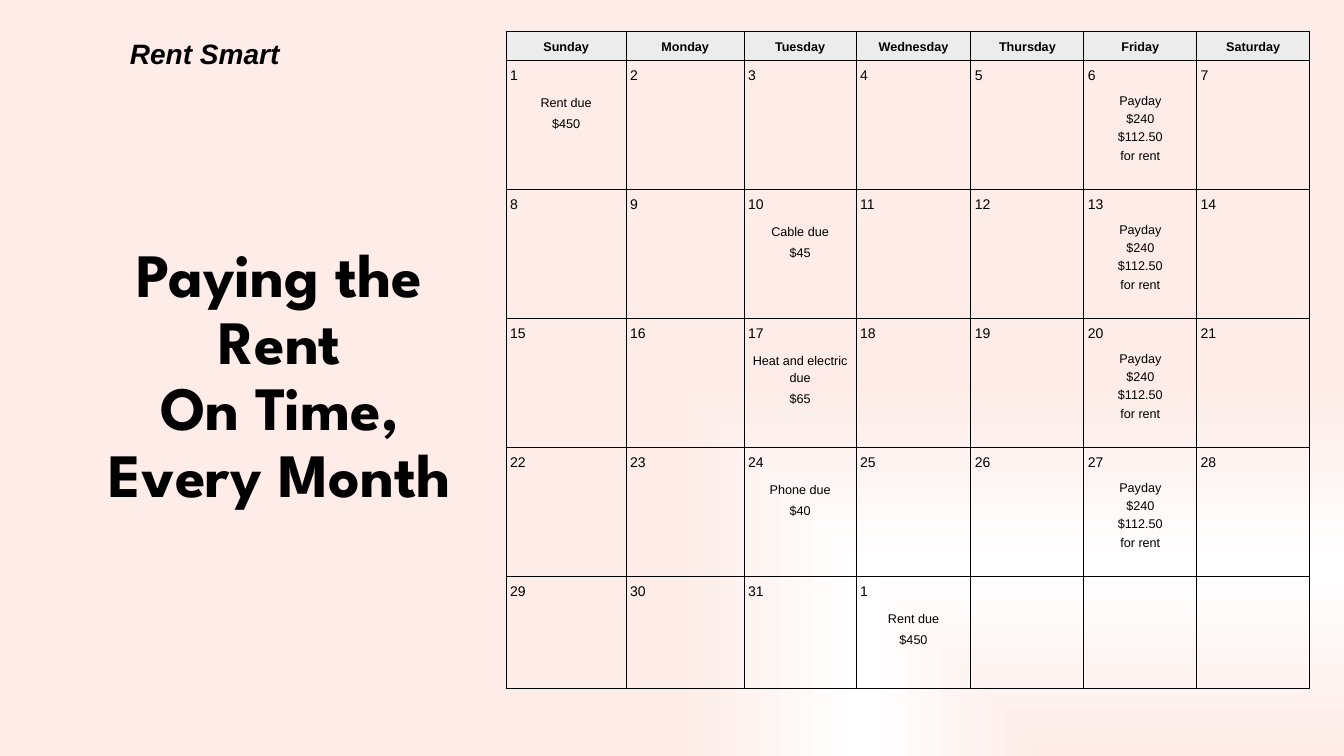
from dataclasses import dataclass

from pptx import Presentation
from pptx.dml.color import RGBColor
from pptx.enum.text import MSO_ANCHOR, PP_ALIGN
from pptx.oxml import parse_xml
from pptx.oxml.ns import nsdecls
from pptx.util import Inches, Pt

LEFT, CENTER = PP_ALIGN.LEFT, PP_ALIGN.CENTER
TOP, MIDDLE = MSO_ANCHOR.TOP, MSO_ANCHOR.MIDDLE
SLIDE_WIDTH, SLIDE_HEIGHT = Inches(13.33), Inches(7.5)


@dataclass(frozen=True)
class Theme:
    ink: str = "000000"
    blush: str = "FDECE7"
    glow: str = "FFFFFF"
    header: str = "ECECEC"
    body_font: str = "Arial"
    title_font: str = "League Spartan"
    title_size: float = 44
    brand_size: float = 20
    day_size: float = 10
    note_size: float = 9
    border: float = 0.75
    inset: float = 0.04
    spacing: float = 1.19
    lead: float = 1.6


THEME = Theme()
WEEKDAYS = ["Sunday", "Monday", "Tuesday", "Wednesday", "Thursday", "Friday", "Saturday"]
COLUMN_SHARES = [8.93, 8.78, 8.33, 8.55, 8.4, 8.4, 8.4]
ROW_SHARES = [3.87] + [17.07] * 4 + [14.8]
DAYS = [*range(1, 32), 1]
BILLS = {
    0: ["Rent due", "$450"],
    9: ["Cable due", "$45"],
    16: ["Heat and electric due", "$65"],
    23: ["Phone due", "$40"],
    31: ["Rent due", "$450"],
}
PAYDAY = ["Payday", "$240", "$112.50", "for rent"]
FRIDAY = WEEKDAYS.index("Friday")


def across(percent):
    return round(SLIDE_WIDTH * percent / 100)


def down(percent):
    return round(SLIDE_HEIGHT * percent / 100)


def set_insets(holder):
    holder.margin_left = holder.margin_right = Inches(THEME.inset)
    holder.margin_top = holder.margin_bottom = Inches(THEME.inset)


def add_run(paragraph, words, size, font=THEME.body_font, bold=False, italic=False):
    run = paragraph.add_run()
    run.text = words
    run.font.name = font
    run.font.size = Pt(size)
    run.font.bold = bold
    run.font.italic = italic
    run.font.color.rgb = RGBColor.from_string(THEME.ink)


def space(paragraph, align, before, after):
    paragraph.alignment = align
    paragraph.line_spacing = THEME.spacing
    paragraph.space_before = Pt(before)
    paragraph.space_after = Pt(after)


def paint_background(slide):
    stops = "".join(
        f'<a:gs pos="{position * 1000}"><a:srgbClr val="{color}"/></a:gs>'
        for position, color in [(0, THEME.blush), (50, THEME.glow), (100, THEME.blush)]
    )
    slide.element.cSld.insert(0, parse_xml(
        f'<p:bg {nsdecls("p", "a")}><p:bgPr><a:gradFill rotWithShape="1">'
        f'<a:gsLst>{stops}</a:gsLst><a:path path="rect">'
        '<a:fillToRect l="100000" t="100000"/></a:path></a:gradFill>'
        '<a:effectLst/></p:bgPr></p:bg>'
    ))


def add_brand(slide):
    box = slide.shapes.add_textbox(across(-6.3), down(4.27), across(43.06), down(16.67))
    frame = box.text_frame
    frame.word_wrap = True
    set_insets(frame)
    heading = frame.paragraphs[0]
    heading.alignment = CENTER
    add_run(heading, "Rent Smart", THEME.brand_size, bold=True, italic=True)


def add_title(slide):
    box = slide.shapes.add_textbox(across(7.13), down(23.73), across(27.38), down(52.4))
    frame = box.text_frame
    frame.word_wrap = True
    frame.vertical_anchor = MIDDLE
    title = frame.paragraphs[0]
    title.alignment = CENTER
    title.line_spacing = 0.9
    add_run(title, "Paying the Rent", THEME.title_size, THEME.title_font, bold=True)
    title.add_line_break()
    add_run(title, "On Time, Every Month", THEME.title_size, THEME.title_font, bold=True)


def style_cell(cell, anchor, fill=None):
    set_insets(cell)
    cell.vertical_anchor = anchor
    properties = cell._tc.get_or_add_tcPr()
    for side in ("lnL", "lnR", "lnT", "lnB"):
        properties.append(parse_xml(
            f'<a:{side} {nsdecls("a")} w="{Pt(THEME.border)}"><a:solidFill>'
            f'<a:srgbClr val="{THEME.ink}"/></a:solidFill></a:{side}>'
        ))
    if fill:
        cell.fill.solid()
        cell.fill.fore_color.rgb = RGBColor.from_string(fill)
    else:
        cell.fill.background()


def fill_weekday(cell, weekday):
    style_cell(cell, MIDDLE, THEME.header)
    label = cell.text_frame.paragraphs[0]
    space(label, CENTER, 0, 6)
    add_run(label, weekday, THEME.note_size, bold=True)


def fill_day(cell, slot):
    style_cell(cell, TOP)
    if slot >= len(DAYS):
        return
    date = cell.text_frame.paragraphs[0]
    space(date, LEFT, 0, 6)
    add_run(date, str(DAYS[slot]), THEME.day_size)
    is_payday = slot % len(WEEKDAYS) == FRIDAY
    for entry in PAYDAY if is_payday else BILLS.get(slot, []):
        note = cell.text_frame.add_paragraph()
        space(note, CENTER, 0 if is_payday else THEME.lead, 1)
        add_run(note, entry, THEME.note_size)


def add_calendar(slide):
    frame = slide.shapes.add_table(
        len(ROW_SHARES), len(WEEKDAYS), across(37.66), down(4.13),
        across(sum(COLUMN_SHARES)), down(sum(ROW_SHARES)),
    )
    calendar = frame.table
    calendar.first_row = calendar.horz_banding = False
    for column, share in zip(calendar.columns, COLUMN_SHARES):
        column.width = across(share)
    for row, share in zip(calendar.rows, ROW_SHARES):
        row.height = down(share)
    for position, weekday in enumerate(WEEKDAYS):
        fill_weekday(calendar.cell(0, position), weekday)
        for week in range(len(ROW_SHARES) - 1):
            fill_day(calendar.cell(week + 1, position), week * len(WEEKDAYS) + position)


def main():
    deck = Presentation()
    deck.slide_width, deck.slide_height = SLIDE_WIDTH, SLIDE_HEIGHT
    slide = deck.slides.add_slide(deck.slide_layouts[6])
    paint_background(slide)
    add_brand(slide)
    add_calendar(slide)
    add_title(slide)
    deck.save("out.pptx")


if __name__ == "__main__":
    main()
